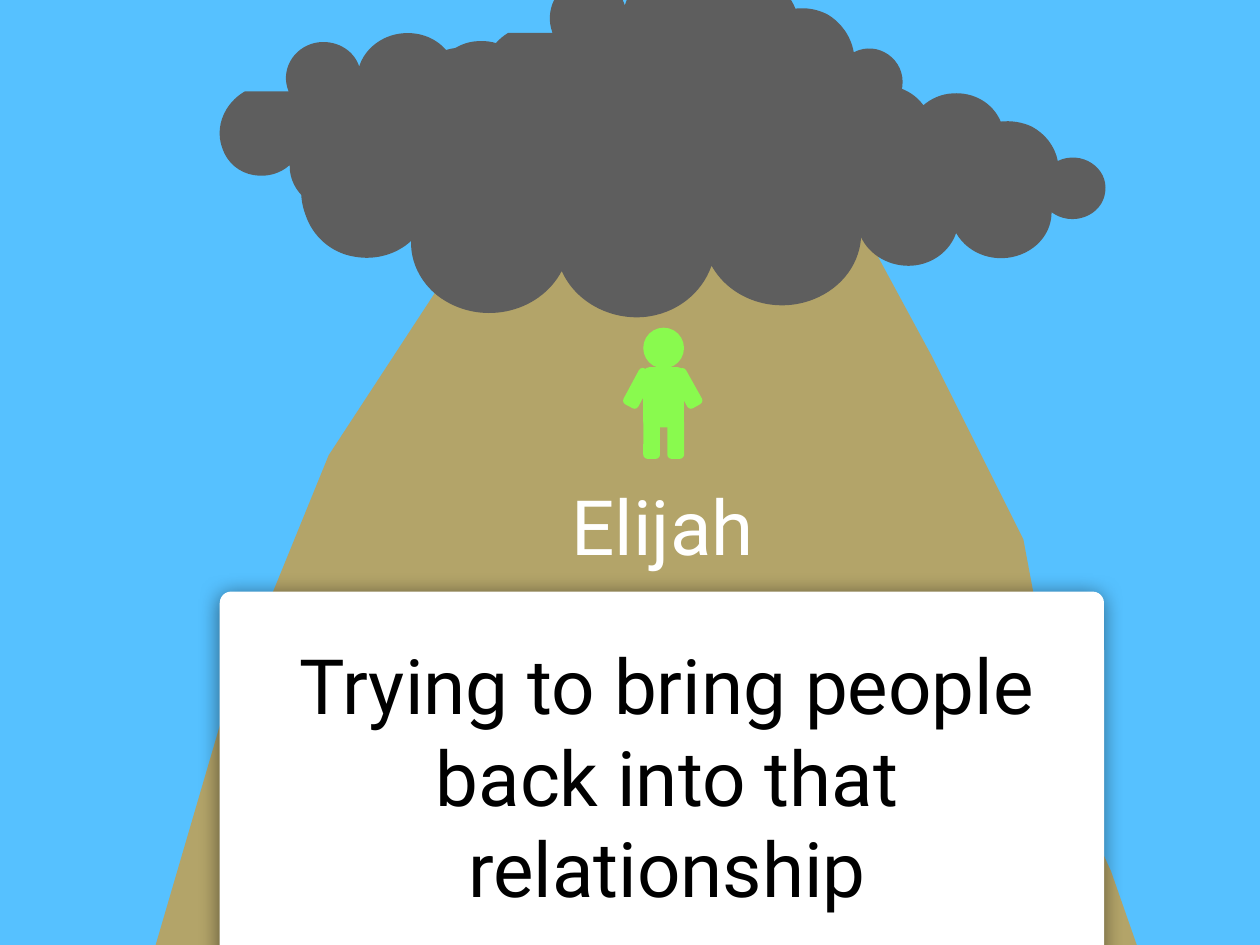
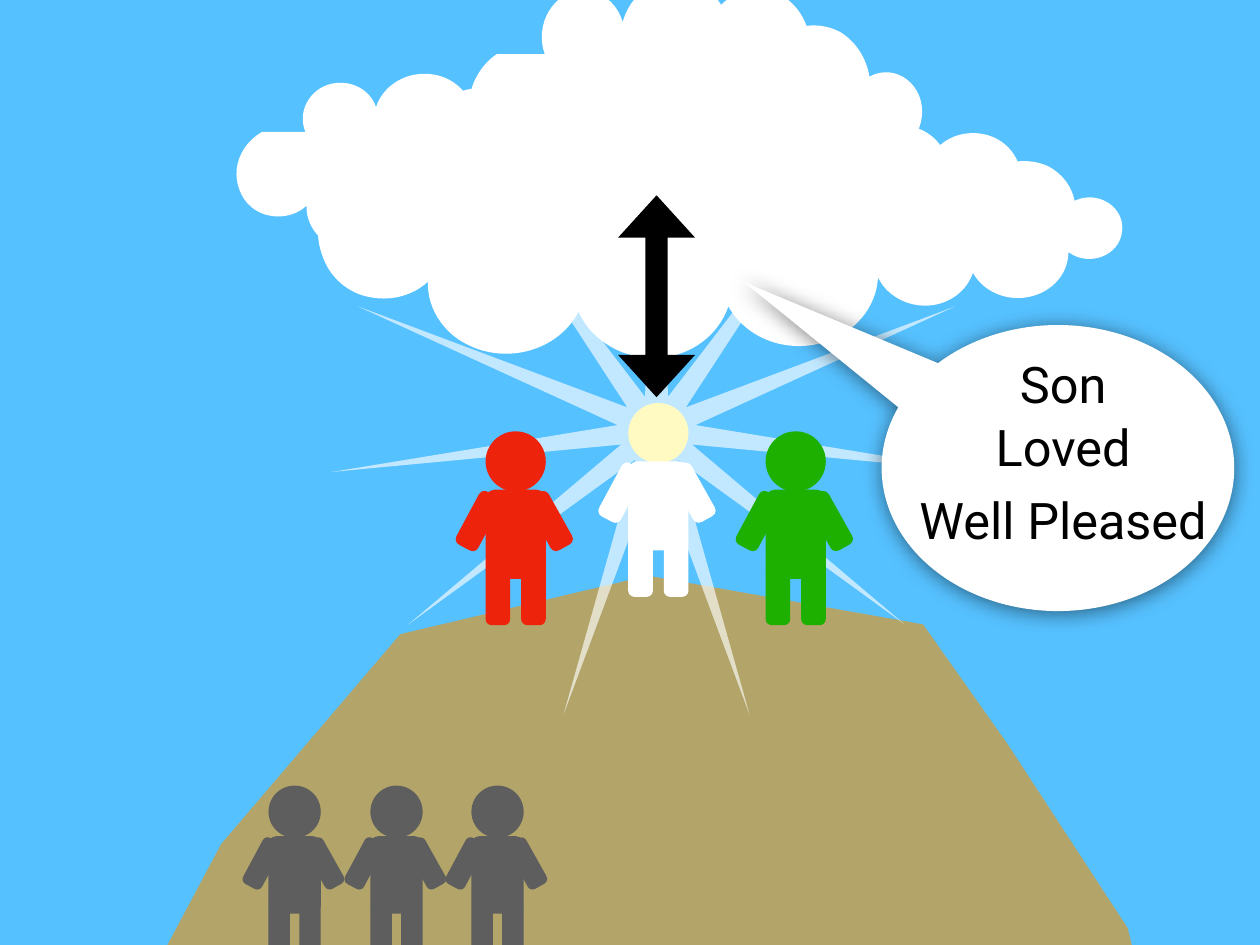
from lxml import etree
from pptx import Presentation
from pptx.dml.color import RGBColor
from pptx.enum import shapes, text
from pptx.oxml import ns
from pptx.util import Pt

# ---- Shared look: 100 px to the inch ----
PX = 9144
SIZE = (1422, 1067)
SKY_BOX = (0, -3, 1422, 1072)
FONT = "Roboto"
COLOURS = dict(sky="56C1FF", mountain="B3A469", storm="5E5E5E", white="FFFFFF",
               black="000000", lime="89FA4E", halo="FFF056", red="EE230C", green="1EB001")

# ---- Outlines, each with the box it was measured in ----
MOUNTAIN_BOX = (159, 211, 1177, 1008)
MOUNTAIN = [(159, 1124), (252, 806), (371, 514), (526, 277), (740, 211), (978, 266),
            (1051, 401), (1155, 609), (1205, 876), (1254, 984), (1336, 1219)]
CLOUD_BOX = (340, 37, 728, 321)
# two numbers are a start or a straight line, six a curve (two handles and an end)
CLOUD = [
    (345, 243),
    (353, 267, 374, 286, 401, 290), (424, 294, 448, 287, 464, 272),
    (463, 296, 475, 319, 494, 334), (540, 369, 608, 355, 634, 306),
    (649, 340, 687, 361, 726, 358), (762, 355, 792, 332, 803, 300),
    (825, 339, 875, 355, 918, 338), (951, 325, 972, 296, 972, 263),
    (1008, 290, 1062, 270, 1067, 227), (1073, 184, 1025, 152, 983, 172),
    (978, 146, 961, 124, 937, 111), (920, 103, 901, 100, 882, 102),
    (868, 69, 834, 49, 796, 52), (777, 53, 759, 61, 745, 73),
    (727, 48, 696, 35, 664, 38), (628, 41, 597, 65, 587, 97),
    (577, 66, 543, 48, 509, 55), (469, 64, 447, 105, 462, 141),
    (385, 141), (371, 149, 360, 160, 352, 173), (339, 194, 336, 220, 345, 243),
]
RAYS_AXIS = 741
RAYS_RIGHT = [(741, 150), (754, 448), (941, 204), (774, 460), (1078, 346), (785, 480),
              (1108, 533), (781, 502), (1021, 705), (765, 519), (846, 807), (741, 525)]

# Parts of a person in head widths: preset, left, top, width, height, turn, corner
PERSON = [
    ("OVAL", 0, 0, 1, 1, 0, None),
    ("ROUNDED_RECTANGLE", 0, 0.97, 1, 1.48, 0, 0.15),
    ("ROUNDED_RECTANGLE", 0, 2.22, 0.41, 1, 0, 0.25),
    ("ROUNDED_RECTANGLE", 0.59, 2.22, 0.41, 1, 0, 0.25),
    ("ROUNDED_RECTANGLE", -0.32, 0.99, 0.41, 1, 28.2, 0.25),
    ("ROUNDED_RECTANGLE", 0.86, 0.99, 0.41, 1, 330.8, 0.25),
]

# ---- Content ----
ELIJAH = dict(
    mountain=MOUNTAIN_BOX,
    clouds=[CLOUD_BOX, (248, 37, 464, 204), (784, 96, 464, 204), (544, -36, 475, 226)],
    person=(726, 370, 46),
    name=("Elijah", (431, 529, 634, 128)),
    card=(248, 668, 998, 427),
    message=("Trying to bring people back into that relationship", (258, 672, 990, 408)),
)
SON = dict(
    mountain=(-27, 650, 1536, 1008),
    clouds=[(359, 83, 728, 321), (267, 83, 464, 204), (803, 141, 464, 204), (529, -24, 512, 263)],
    glowing=(709, 455, 68),
    companions=[(548, 487, 68, "red"), (864, 487, 68, "green")]
    + [(left, 887, 59, "storm") for left in (418, 532, 303)],
    callout=(995, 367, 398, 323),
    arrow=(627, 291, 228, 87),
    heading=("Son", (1001, 388, 398, 89)),
    praises=[("Loved", (1001, 460, 398, 89)), ("Well Pleased", (1001, 542, 398, 89))],
)


# ---- Drawing helpers ----
def emu(lengths):
    return [round(length * PX) for length in lengths]


def paint(shape, colour, alpha=None):
    shape.shadow.inherit = False
    shape.fill.solid()
    shape.fill.fore_color.rgb = RGBColor.from_string(COLOURS[colour])
    shape.line.fill.background()
    if alpha:
        tint = shape.element.spPr.find(".//" + ns.qn("a:srgbClr"))
        etree.SubElement(tint, ns.qn("a:alpha"), val=str(alpha * 1000))


def preset(slide, kind, box, colour, turn=0, adjust=()):
    shape = slide.shapes.add_shape(getattr(shapes.MSO_SHAPE, kind), *emu(box))
    shape.rotation = turn
    for i, value in enumerate(adjust):
        shape.adjustments[i] = value
    paint(shape, colour)
    return shape


def outline(slide, points, colour, alpha=None):
    start, *rest = [emu(point) for point in points]
    builder = slide.shapes.build_freeform(*start, scale=1.0)
    builder.add_line_segments(rest, close=True)
    shape = builder.convert_to_shape()
    paint(shape, colour, alpha)
    return shape


def add_mountain(slide, box):
    outline(slide, [tuple(box[i] + (point[i] - MOUNTAIN_BOX[i]) * box[i + 2] / MOUNTAIN_BOX[i + 2]
                          for i in (0, 1)) for point in MOUNTAIN], "mountain")


def add_cloud(slide, box, colour):
    left, top, width, height = box
    right, bottom = left + width, top + height
    frame = outline(slide, [(left, top), (right, top), (right, bottom), (left, bottom)], colour)
    # Replace the frame's straight edges by the curves
    edge = frame.element.spPr.find(".//" + ns.qn("a:path"))
    for child in list(edge):
        edge.remove(child)
    x0, y0, source_width, source_height = CLOUD_BOX
    edge.set("w", str(source_width))
    edge.set("h", str(source_height))
    for i, segment in enumerate(CLOUD):
        tag = "a:moveTo" if i == 0 else "a:lnTo" if len(segment) == 2 else "a:cubicBezTo"
        step = etree.SubElement(edge, ns.qn(tag))
        for x, y in zip(segment[::2], segment[1::2]):
            etree.SubElement(step, ns.qn("a:pt"), x=str(x - x0), y=str(y - y0))
    etree.SubElement(edge, ns.qn("a:close"))


def add_person(slide, left, top, head, colour, head_colour=None):
    for kind, x, y, w, h, turn, corner in PERSON:
        box = (left + x * head, top + y * head, w * head, h * head)
        part_colour = head_colour if head_colour and kind == "OVAL" else colour
        preset(slide, kind, box, part_colour, turn, [corner] if corner else ())


def cast_shadow(shape):
    effects = shape.element.spPr.find(ns.qn("a:effectLst"))
    shadow = etree.SubElement(effects, ns.qn("a:outerShdw"), blurRad=str(Pt(17)),
                              dist=str(Pt(2)), dir="5400000", rotWithShape="0")
    black = etree.SubElement(shadow, ns.qn("a:srgbClr"), val=COLOURS["black"])
    etree.SubElement(black, ns.qn("a:alpha"), val="50000")


def write(holder, words, box, size, colour):
    holder.element.getparent().append(holder.element)  # bring in front of the drawing
    for name, value in zip(("left", "top", "width", "height"), emu(box)):
        setattr(holder, name, value)
    frame = holder.text_frame
    frame_format = dict.fromkeys(
        ("margin_left", "margin_top", "margin_right", "margin_bottom"), 6 * PX)
    frame_format.update(word_wrap=True, auto_size=text.MSO_AUTO_SIZE.NONE,
                        vertical_anchor=text.MSO_ANCHOR.MIDDLE)
    for name, value in frame_format.items():
        setattr(frame, name, value)
    frame.text = words
    paragraph = frame.paragraphs[0]
    paragraph.alignment = text.PP_ALIGN.CENTER
    paragraph.space_before = Pt(0)
    layout = paragraph._p.get_or_add_pPr()
    layout.set("marL", "0")
    layout.set("indent", "0")
    etree.SubElement(layout, ns.qn("a:buNone"))
    font = paragraph.runs[0].font
    font.name, font.size = FONT, Pt(size)
    font.color.rgb = RGBColor.from_string(COLOURS[colour])


def add_scene(prs, layout_index, mountain):
    slide = prs.slides.add_slide(prs.slide_layouts[layout_index])
    preset(slide, "RECTANGLE", SKY_BOX, "sky")
    add_mountain(slide, mountain)
    return slide


# ---- Slides ----
def elijah_slide(prs):
    slide = add_scene(prs, 1, ELIJAH["mountain"])
    for box in ELIJAH["clouds"]:
        add_cloud(slide, box, "storm")
    add_person(slide, *ELIJAH["person"], "lime")
    write(slide.shapes.title, *ELIJAH["name"], 62, "white")
    cast_shadow(preset(slide, "ROUNDED_RECTANGLE", ELIJAH["card"], "white", adjust=[0.03]))
    write(slide.placeholders[1], *ELIJAH["message"], 62, "black")


def son_slide(prs):
    slide = add_scene(prs, 5, SON["mountain"])
    add_person(slide, *SON["glowing"], "white", "halo")
    rays_left = [(2 * RAYS_AXIS - x, y) for x, y in RAYS_RIGHT[-2:0:-1]]
    outline(slide, RAYS_RIGHT + rays_left, "white", alpha=64)
    for companion in SON["companions"]:
        add_person(slide, *companion)
    for box in SON["clouds"]:
        add_cloud(slide, box, "white")
    cast_shadow(preset(slide, "OVAL_CALLOUT", SON["callout"], "white", adjust=[-0.89, -0.65]))
    write(slide.shapes.title, *SON["heading"], 41, "black")
    preset(slide, "LEFT_RIGHT_ARROW", SON["arrow"], "black", 270, [0.29, 0.55])
    for words, box in SON["praises"]:
        write(slide.shapes.add_textbox(*emu(box)), words, box, 41, "black")


def main():
    prs = Presentation()
    prs.slide_width, prs.slide_height = emu(SIZE)
    elijah_slide(prs)
    son_slide(prs)
    prs.save("out.pptx")


if __name__ == "__main__":
    main()
